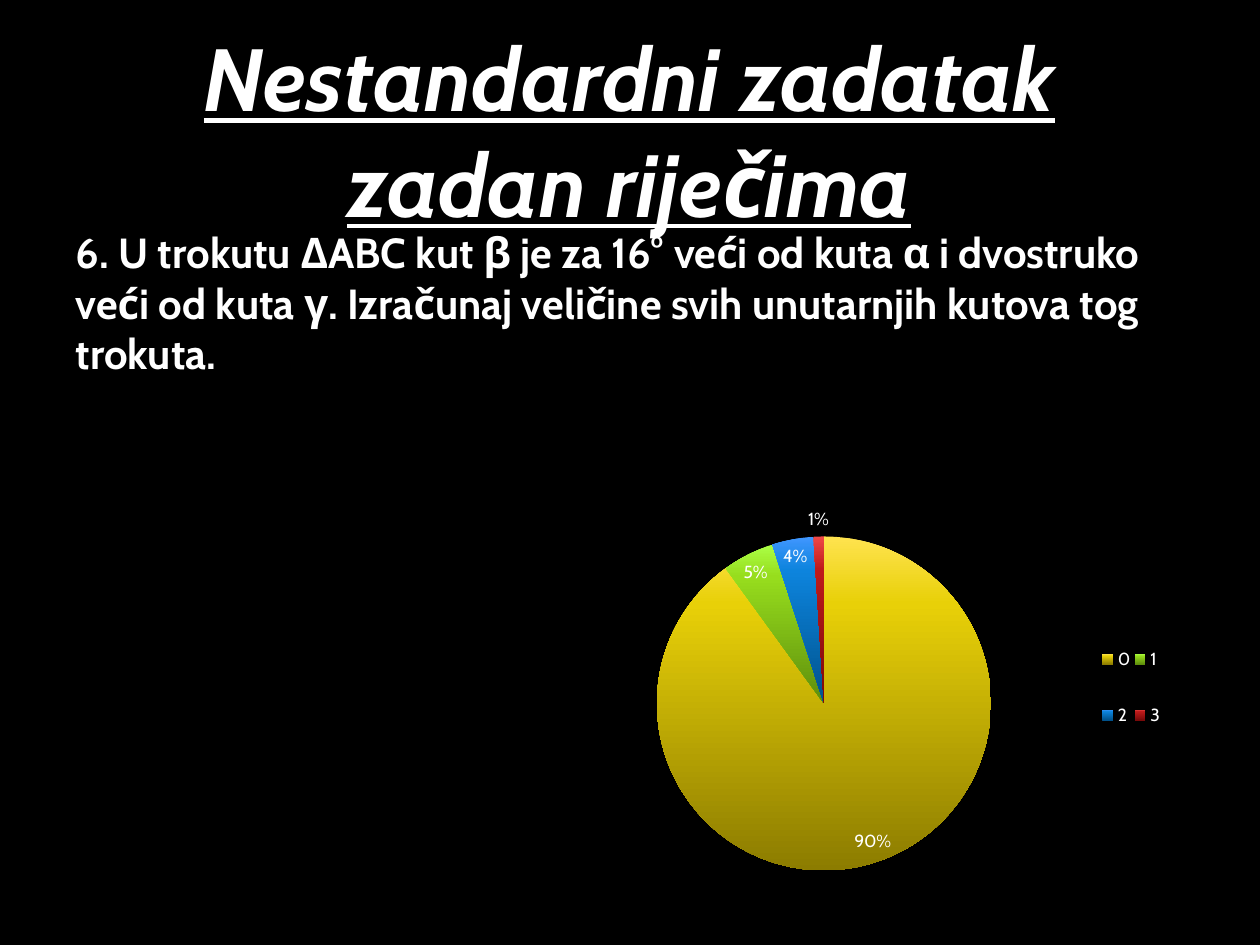
from copy import deepcopy
from dataclasses import dataclass

from lxml import etree
from pptx import Presentation
from pptx.chart.data import CategoryChartData
from pptx.dml.color import RGBColor
from pptx.enum.chart import XL_CHART_TYPE, XL_LABEL_POSITION, XL_LEGEND_POSITION
from pptx.enum.text import MSO_ANCHOR, MSO_AUTO_SIZE, PP_ALIGN
from pptx.oxml.ns import qn
from pptx.util import Pt

PIE = XL_CHART_TYPE.PIE
BEST_FIT = XL_LABEL_POSITION.BEST_FIT
RIGHT = XL_LEGEND_POSITION.RIGHT
NO_AUTOFIT = MSO_AUTO_SIZE.NONE
TOP, MIDDLE = MSO_ANCHOR.TOP, MSO_ANCHOR.MIDDLE
LEFT, CENTER = PP_ALIGN.LEFT, PP_ALIGN.CENTER


@dataclass(frozen=True)
class Theme:
    font: str = "Cabin"
    background: str = "000000"
    text: str = "FFFFFF"
    title_size: float = 50.4
    body_size: float = 24
    chart_size: float = 10
    slices: tuple = (
        ("FFE34F", "E8D008", "8C7C00"),
        ("ABFF45", "97DD1D", "5E8E0C"),
        ("4096FF", "0D84DD", "00528C"),
        ("F04848", "BE1A1A", "7A0A0A"),
    )


THEME = Theme()
TITLE = "Nestandardni zadatak zadan riječima"
TASK = ("6. U trokutu ΔABC kut β je za 16° veći od kuta α i dvostruko veći od kuta γ. "
        "Izračunaj veličine svih unutarnjih kutova tog trokuta.")
SHARES = {"0": 90, "1": 5, "2": 4, "3": 1}


def apply_format(target, values):
    for name, value in values.items():
        setattr(target, name, value)


def style_font(font, size, **extra):
    apply_format(font, {"name": THEME.font, "size": Pt(size), **extra})
    font.color.rgb = RGBColor.from_string(THEME.text)


def fill_placeholder(box, text, place, anchor, align, size, **font_values):
    apply_format(box, dict(zip(("left", "top", "width", "height"), map(Pt, place))))
    frame = box.text_frame
    frame.text = text
    apply_format(frame, {"word_wrap": True, "auto_size": NO_AUTOFIT,
                         "vertical_anchor": anchor})
    para = frame.paragraphs[0]
    properties = para._p.get_or_add_pPr()
    apply_format(para, {"alignment": align, "space_before": Pt(0)})
    properties.set("marL", "0")
    properties.set("indent", "0")
    etree.SubElement(properties, qn("a:buNone"))
    style_font(para.runs[0].font, size, **font_values)


def set_layout(parent, place, inner=False):
    layout = parent.find(qn("c:layout"))
    if layout is None:
        layout = etree.Element(qn("c:layout"))
        parent.insert(1 if parent.tag == qn("c:legend") else 0, layout)
    manual = etree.SubElement(layout, qn("c:manualLayout"))
    settings = {"layoutTarget": "inner"} if inner else {}
    settings.update(xMode="edge", yMode="edge")
    settings.update(zip("xywh", map(str, place)))
    for name, value in settings.items():
        etree.SubElement(manual, qn(f"c:{name}")).set("val", value)


def shade_slice(point, colors):
    fill = point.format.fill
    fill.gradient()
    fill.gradient_angle = 270
    stop_list = point.format._element.find(".//" + qn("a:gsLst")) if hasattr(
        point.format, "_element") else fill.gradient_stops[0]._gs.getparent()
    stop_list.insert(1, deepcopy(stop_list[0]))
    for stop, color, position in zip(fill.gradient_stops, colors, (0, 0.2, 1)):
        stop.color.rgb = RGBColor.from_string(color)
        stop.position = position


def add_pie(page, shares, place):
    data = CategoryChartData()
    data.categories = list(shares)
    data.add_series("Series 1", list(shares.values()))
    chart = page.shapes.add_chart(PIE, *map(Pt, place), data).chart
    apply_format(chart, {"has_title": False, "has_legend": True})
    style_font(chart.font, THEME.chart_size)
    apply_format(chart.legend, {"position": RIGHT, "include_in_layout": False})
    set_layout(chart.legend._element, (0.81, 0.35, 0.1, 0.31))

    plot = chart.plots[0]
    plot.vary_by_categories = True
    set_layout(plot._element.getparent(), (0.15, 0.14, 0.5, 0.8), inner=True)
    plot.has_data_labels = True
    labels = plot.data_labels
    apply_format(labels, {"show_percentage": True, "show_value": False,
                          "number_format": "0%", "number_format_is_linked": False,
                          "position": BEST_FIT})
    style_font(labels.font, THEME.chart_size)
    for index, colors in enumerate(THEME.slices):
        shade_slice(plot.series[0].points[index], colors)


def main():
    deck = Presentation()
    apply_format(deck, {"slide_width": Pt(720), "slide_height": Pt(540)})
    page = deck.slides.add_slide(deck.slide_layouts[1])
    page.background.fill.solid()
    page.background.fill.fore_color.rgb = RGBColor.from_string(THEME.background)
    fill_placeholder(page.shapes.title, TITLE, (61.2, 8.6, 597, 130.3), MIDDLE, CENTER,
                     THEME.title_size, bold=True, italic=True, underline=True)
    fill_placeholder(page.placeholders[1], TASK, (36, 126, 648, 131), TOP, LEFT,
                     THEME.body_size, bold=True)
    add_pie(page, SHARES, (318.2, 257, 381.6, 268.6))
    deck.save("out.pptx")


if __name__ == "__main__":
    main()
